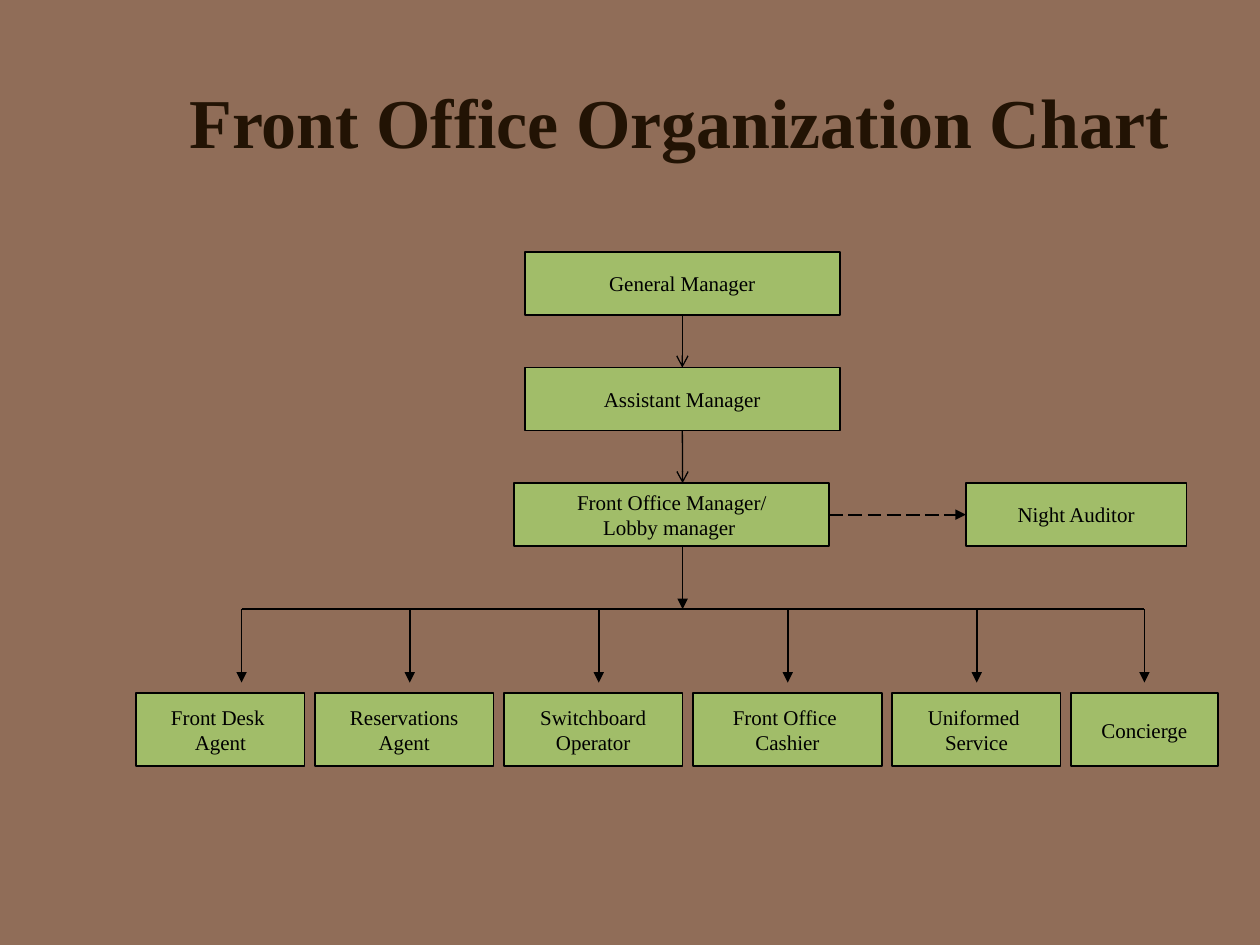
from pptx import Presentation
from pptx.dml.color import RGBColor
from pptx.enum import dml, shapes, text
from pptx.oxml.ns import qn
from pptx.util import Cm, Pt
from lxml import etree

FONT = "Times New Roman"
BACK, GREEN, BLACK, BROWN = "906D58", "A1BD69", "000000", "221304"

# Content: (label, left, top, width) for managers, in cm
TITLE = "Front Office Organization Chart"
BOSSES = [
    ("General Manager", 10.58, 5.08, 6.35),
    ("Assistant Manager", 10.58, 7.41, 6.35),
    ("Front Office Manager/\nLobby manager ", 10.37, 9.74, 6.35),
    ("Night Auditor", 19.47, 9.74, 4.45),
]
# Staff: (label, box width, x of the arrow above it)
STAFF = [
    ("Front Desk \nAgent", 3.39, 4.87),
    (" Reservations \nAgent", 3.6, 8.26),
    ("Switchboard\nOperator", 3.6, 12.07),
    ("Front Office \nCashier", 3.81, 15.88),
    ("Uniformed \nService", 3.39, 19.69),
    ("Concierge", 2.96, 23.07),
]
BOSS_H, STAFF_H = 1.27, 1.48
STAFF_X, STAFF_Y, GAP = 2.75, 13.97, 0.21
MID, BUS_Y, TIP_Y = 13.76, 12.28, 13.76


def rgb(code):
    return RGBColor.from_string(code)


def style(par, size, color, bold=False):
    par.alignment = text.PP_ALIGN.CENTER
    font = par.font
    font.name, font.size, font.bold = FONT, Pt(size), bold
    font.color.rgb = rgb(color)


def add_box(label, x, y, w, h):
    box = slide.shapes.add_shape(shapes.MSO_SHAPE.RECTANGLE,
                                 Cm(x), Cm(y), Cm(w), Cm(h))
    box.shadow.inherit = False
    box.fill.solid()
    box.fill.fore_color.rgb = rgb(GREEN)
    box.line.color.rgb = rgb(BLACK)
    box.line.width = Pt(1)
    frame = box.text_frame
    frame.word_wrap = False
    frame.vertical_anchor = text.MSO_ANCHOR.MIDDLE
    frame.text = label
    for par in frame.paragraphs:
        style(par, 12, BLACK)
    return box


def add_line(x1, y1, x2, y2, head=None, width=1, dash=None):
    line = slide.shapes.add_connector(shapes.MSO_CONNECTOR.STRAIGHT,
                                      Cm(x1), Cm(y1), Cm(x2), Cm(y2))
    line.line.color.rgb = rgb(BLACK)
    line.line.width = Pt(width)
    if dash:
        line.line.dash_style = dash
    props = line._element.spPr
    if head:
        etree.SubElement(props.find(qn("a:ln")), qn("a:tailEnd"), type=head)
    etree.SubElement(props, qn("a:effectLst"))
    return line


# Slide and title
prs = Presentation()
prs.slide_width, prs.slide_height = Cm(25.4), Cm(19.05)
slide = prs.slides.add_slide(prs.slide_layouts[5])
slide.background.fill.solid()
slide.background.fill.fore_color.rgb = rgb(BACK)
title = slide.shapes.title
title.left, title.top, title.width, title.height = Cm(2.97), Cm(0.84), Cm(21.44), Cm(3.18)
title.text_frame.text = TITLE
title.text_frame.vertical_anchor = text.MSO_ANCHOR.MIDDLE
style(title.text_frame.paragraphs[0], 40, BROWN, True)

# Managers and the lines between them
chief, deputy, front, night = [add_box(*boss, BOSS_H) for boss in BOSSES]
for upper, (_, _, y, _), (_, _, below, _) in zip((chief, deputy), BOSSES, BOSSES[1:]):
    link = add_line(MID, y + BOSS_H, MID, below, "arrow", 0.75)
    link.begin_connect(upper, 2)
    if upper is chief:
        link.end_connect(deputy, 0)
side = add_line(16.72, 10.37, 19.47, 10.37, "triangle", dash=dml.MSO_LINE.LONG_DASH)
side.begin_connect(front, 3)
side.end_connect(night, 1)

# Branch line down to the staff
add_line(MID, BOSSES[2][2] + BOSS_H, MID, BUS_Y, "triangle")
add_line(STAFF[0][2], BUS_Y, STAFF[-1][2], BUS_Y)

# Staff row
x = STAFF_X
for label, width, drop in STAFF:
    add_box(label, x, STAFF_Y, width, STAFF_H)
    add_line(drop, BUS_Y, drop, TIP_Y, "triangle")
    x += width + GAP

prs.save("out.pptx")
